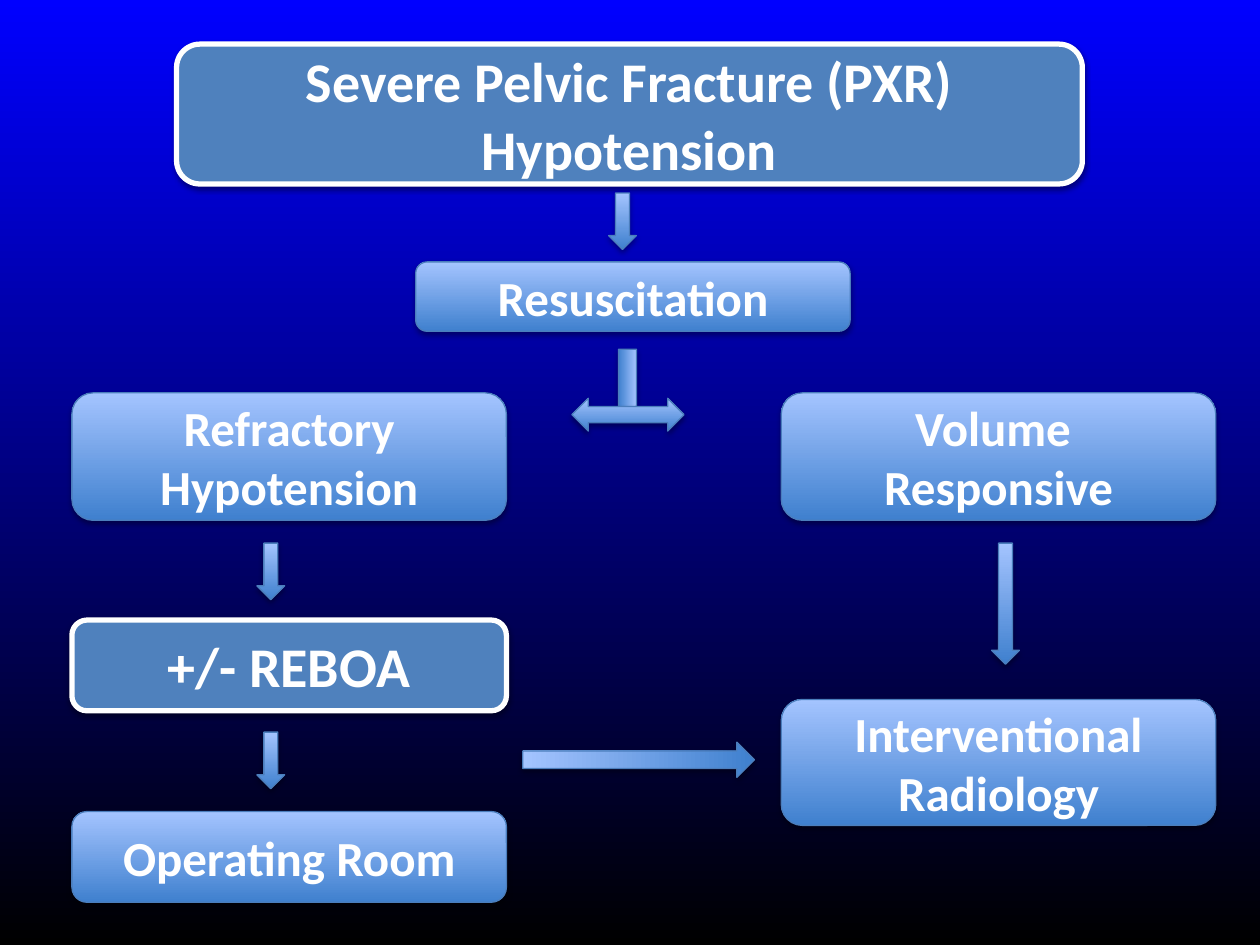
"""Build the treatment flowchart for severe pelvic fracture with hypotension."""
from lxml import etree
from pptx import Presentation
from pptx.dml.color import RGBColor
from pptx.enum.shapes import MSO_SHAPE
from pptx.enum.text import MSO_ANCHOR, PP_ALIGN
from pptx.oxml.ns import qn
from pptx.util import Cm, Pt

BOX = MSO_SHAPE.ROUNDED_RECTANGLE
DOWN = MSO_SHAPE.DOWN_ARROW
LEFT_RIGHT = MSO_SHAPE.LEFT_RIGHT_ARROW
STEM = MSO_SHAPE.PENTAGON
MIDDLE = MSO_ANCHOR.MIDDLE
CENTER = PP_ALIGN.CENTER

COLORS = {
    "bg_top": "0000FF",
    "bg_bottom": "000000",
    "key_fill": "4F81BD",
    "white": "FFFFFF",
    "grad_dark": "3F80CE",
    "grad_light": "A4C4FF",
    "edge": "4B7EBC",
    "shadow": "000000",
}
KEY = {"size": 32, "line": "white", "width": 3, "alpha": 38, "dist": 1.6}
STEP = {"size": 28, "line": "edge", "width": 0.75, "alpha": 35, "dist": 1.8}

LEFT_X, RIGHT_X, BOX_W = 1.45, 15.75, 8.76
ARROW_W, ARROW_H = 0.56, 1.14


def set_gradient(fill, start, end, angle):
    fill.gradient()
    fill.gradient_angle = angle
    for stop, name in zip(fill.gradient_stops, (start, end)):
        stop.color.rgb = RGBColor.from_string(COLORS[name])


def add_block(kind, x, y, w, h, style, rotation=0):
    sp = s.shapes.add_shape(kind, Cm(x), Cm(y), Cm(w), Cm(h))
    sp.rotation = rotation
    if style is KEY:
        sp.fill.solid()
        sp.fill.fore_color.rgb = RGBColor.from_string(COLORS["key_fill"])
    else:
        set_gradient(sp.fill, "grad_dark", "grad_light", 90)
    sp.line.color.rgb = RGBColor.from_string(COLORS[style["line"]])
    sp.line.width = Pt(style["width"])
    sp.shadow.inherit = False
    effects = sp.element.spPr.find(qn("a:effectLst"))
    shadow = etree.SubElement(effects, qn("a:outerShdw"), {
        "blurRad": str(Pt(3.1)), "dist": str(Pt(style["dist"])),
        "dir": "5400000", "rotWithShape": "0"})
    color = etree.SubElement(shadow, qn("a:srgbClr"), val=COLORS["shadow"])
    etree.SubElement(color, qn("a:alpha"), val=str(style["alpha"] * 1000))
    return sp


prs = Presentation()
prs.slide_width, prs.slide_height = Cm(25.4), Cm(19.05)
s = prs.slides.add_slide(prs.slide_layouts[6])
set_gradient(s.background.fill, "bg_top", "bg_bottom", 270)

boxes = [
    (["Severe Pelvic Fracture (PXR)", "Hypotension"], 3.56, 0.89, 18.26, 2.82, KEY),
    (["+/- REBOA"], LEFT_X, 12.5, BOX_W, 1.83, KEY),
    (["Operating Room"], LEFT_X, 16.36, BOX_W, 1.83, STEP),
    (["Interventional Radiology"], RIGHT_X, 14.1, BOX_W, 2.54, STEP),
    (["Refractory Hypotension"], LEFT_X, 7.92, BOX_W, 2.57, STEP),
    (["Volume ", "Responsive"], RIGHT_X, 7.92, BOX_W, 2.57, STEP),
    (["Resuscitation"], 8.38, 5.28, BOX_W, 1.4, STEP),
]
for lines, x, y, w, h, style in boxes:
    tf = add_block(BOX, x, y, w, h, style).text_frame
    tf.word_wrap = True
    tf.vertical_anchor = MIDDLE
    tf.text = "\n".join(lines)
    font_format = {"name": "Calibri", "size": Pt(style["size"]), "bold": True}
    for p in tf.paragraphs:
        p.alignment = CENTER
        for r in p.runs:
            for key, value in font_format.items():
                setattr(r.font, key, value)
            r.font.color.rgb = RGBColor.from_string(COLORS["white"])

arrows = [
    (DOWN, 12.27, 3.89, ARROW_W, ARROW_H, 0),
    (DOWN, 5.18, 14.76, ARROW_W, ARROW_H, 0),
    (DOWN, 5.18, 10.95, ARROW_W, ARROW_H, 0),
    (DOWN, 19.99, 10.95, ARROW_W, 2.44, 0),
    (STEM, 11.99, 7.52, 1.32, 0.36, 90),
    (LEFT_RIGHT, 11.53, 8.03, 2.26, 0.66, 0),
    (DOWN, 12.52, 12.98, 0.71, 4.67, 270),
]
for kind, x, y, w, h, rotation in arrows:
    add_block(kind, x, y, w, h, STEP, rotation)

prs.save("out.pptx")
